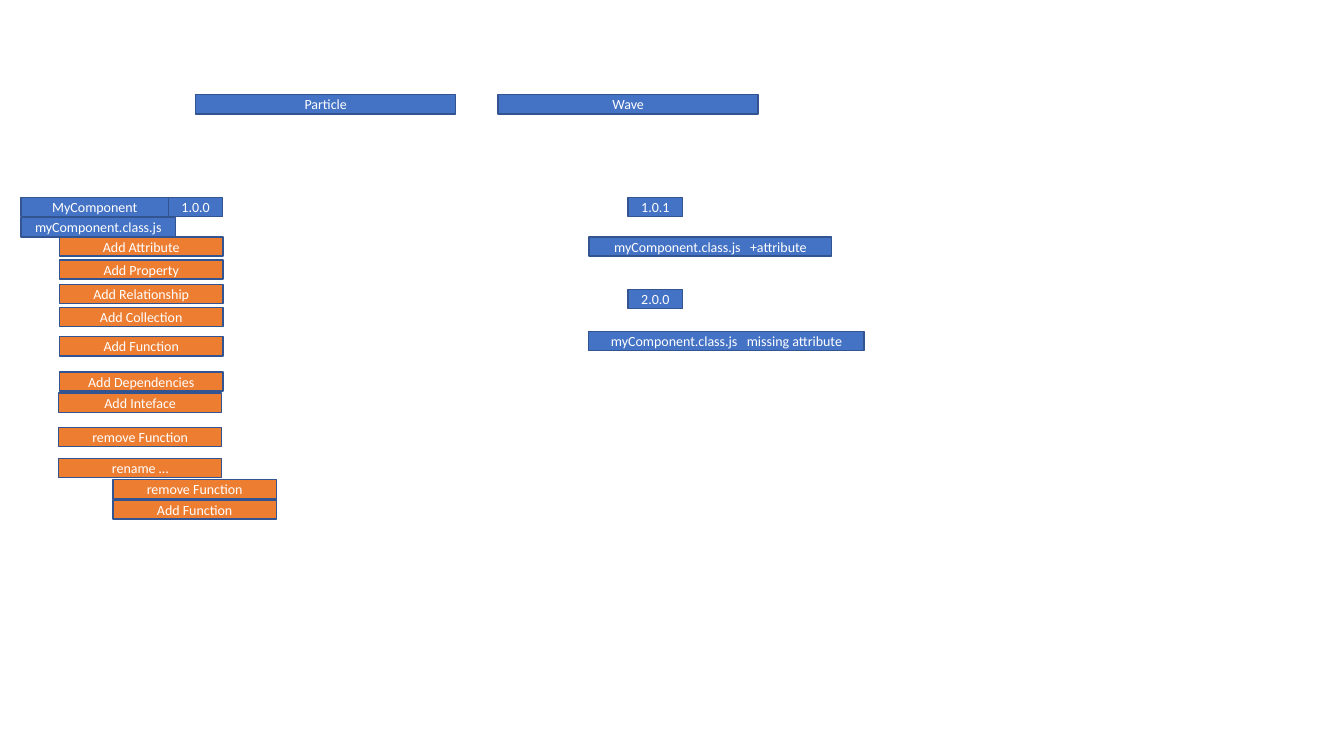
from pptx import Presentation, util as u
from pptx.dml import color
from pptx.enum import shapes, text

BLUE, ORANGE, EDGE, WHITE = "4472C4", "ED7D31", "325491", "FFFFFF"
BAR_HEIGHT = 0.19
ACTION_WIDTH = 1.62
VERSION_WIDTH = 0.54


def rgb(value):
    return color.RGBColor.from_string(value)


def write(para, words, size=10, font="Calibri", ink=WHITE, spacing=0):
    span = para.add_run()
    span.text = words
    span.font.size = u.Pt(size)
    span.font.name = font
    span.font.color.rgb = rgb(ink)
    if spacing:
        span._r.get_or_add_rPr().set("spc", str(int(spacing * 100)))


def add_bar(page, left, top, width, label, fill=BLUE, note=None):
    bar = page.shapes.add_shape(
        shapes.MSO_SHAPE.RECTANGLE, u.Inches(left), u.Inches(top),
        u.Inches(width), u.Inches(BAR_HEIGHT))
    bar.shadow.inherit = False
    bar.fill.solid()
    bar.fill.fore_color.rgb = rgb(fill)
    bar.line.color.rgb = rgb(EDGE)
    bar.line.width = u.Pt(1)
    frame = bar.text_frame
    frame.word_wrap = True
    frame.margin_top = frame.margin_bottom = 0
    frame.vertical_anchor = text.MSO_ANCHOR.MIDDLE
    para = frame.paragraphs[0]
    para.alignment = text.PP_ALIGN.CENTER
    write(para, label)
    if note:
        write(para, " ", spacing=4.5)
        write(para, note)


def add_headings(page, left, top):
    for column, label in enumerate(["Particle", "Wave"]):
        add_bar(page, left + 3 * column, top, 2.58, label)


def add_component(page, left, top):
    name_width = 1.46
    add_bar(page, left, top, name_width, "MyComponent")
    add_bar(page, left + name_width, top, VERSION_WIDTH, "1.0.0")
    add_bar(page, left, top + 0.2, 1.53, "myComponent.class.js")


def add_actions(page, left, top):
    actions = [
        (0, 0, "Add Attribute"),
        (0, 0.23, "Add Property"),
        (0, 0.47, "Add Relationship"),
        (0, 0.7, "Add Collection"),
        (0, 0.99, "Add Function"),
        (0, 1.34, "Add Dependencies"),
        (-0.01, 1.55, "Add Inteface"),
        (-0.01, 1.89, "remove Function"),
        (-0.01, 2.2, "rename …"),
        (0.53, 2.41, "remove Function"),
        (0.53, 2.61, "Add Function"),
    ]
    for indent, drop, label in actions:
        add_bar(page, left + indent, top + drop, ACTION_WIDTH, label, ORANGE)


def add_release(page, left, top, version, file_drop, file_width, change):
    add_bar(page, left + 0.39, top, VERSION_WIDTH, version)
    add_bar(page, left, top + file_drop, file_width, "myComponent.class.js", note=change)


def main():
    deck = Presentation()
    deck.slide_width, deck.slide_height = u.Inches(13.33), u.Inches(7.5)
    page = deck.slides.add_slide(deck.slide_layouts[6])
    add_headings(page, 1.94, 0.94)
    add_component(page, 0.21, 1.96)
    add_actions(page, 0.59, 2.35)
    add_release(page, 5.84, 1.96, "1.0.1", 0.39, 2.41, "+attribute")
    add_release(page, 5.84, 2.87, "2.0.0", 0.42, 2.73, "missing attribute")
    deck.save("out.pptx")


if __name__ == "__main__":
    main()
